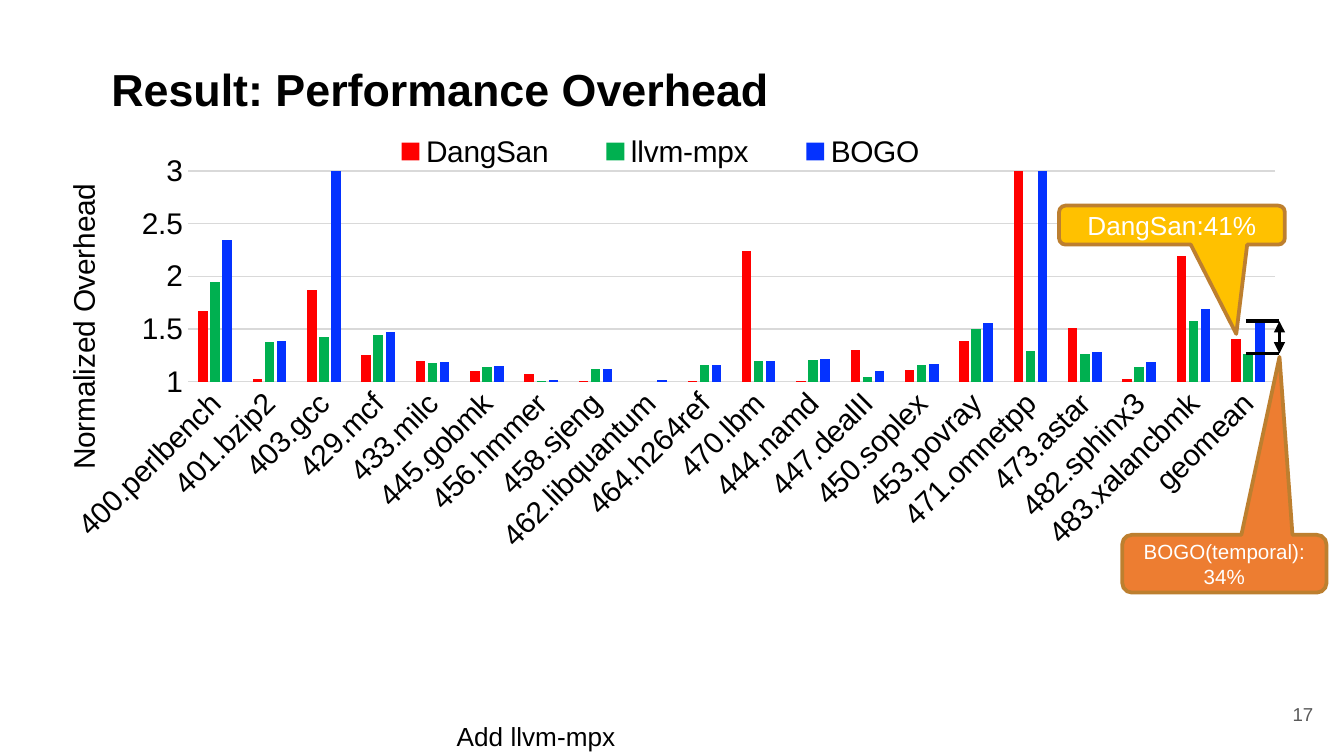
from lxml import etree
from pptx import Presentation
from pptx.chart.data import CategoryChartData
from pptx.dml.color import RGBColor
from pptx.enum.chart import XL_CHART_TYPE, XL_LEGEND_POSITION, XL_TICK_MARK
from pptx.enum.shapes import MSO_CONNECTOR, MSO_SHAPE
from pptx.enum.text import MSO_ANCHOR, PP_ALIGN
from pptx.oxml import parse_xml
from pptx.oxml.ns import nsdecls, qn
from pptx.util import Inches, Pt

FONT = "Arial"
BLACK = RGBColor(0x00, 0x00, 0x00)
WHITE = RGBColor(0xFF, 0xFF, 0xFF)
GRAY = RGBColor(0x59, 0x59, 0x59)
GRID = RGBColor(0xD9, 0xD9, 0xD9)
RED = RGBColor(0xFF, 0x00, 0x00)
GREEN = RGBColor(0x00, 0xB0, 0x50)
BLUE = RGBColor(0x04, 0x32, 0xFF)
YELLOW = RGBColor(0xFF, 0xC1, 0x00)
ORANGE = RGBColor(0xED, 0x7D, 0x31)
BROWN = RGBColor(0xBD, 0x7F, 0x2F)

BENCHMARKS = [
    "400.perlbench", "401.bzip2", "403.gcc", "429.mcf", "433.milc",
    "445.gobmk", "456.hmmer", "458.sjeng", "462.libquantum", "464.h264ref",
    "470.lbm", "444.namd", "447.dealII", "450.soplex", "453.povray",
    "471.omnetpp", "473.astar", "482.sphinx3", "483.xalancbmk", "geomean",
]
SERIES = [
    ("DangSan", RED, [1.67, 1.03, 1.87, 1.25, 1.2, 1.1, 1.07, 1.01, 0.99, 1.01,
                      2.24, 1.01, 1.3, 1.11, 1.39, 7.72, 1.51, 1.03, 2.19, 1.41]),
    ("llvm-mpx", GREEN, [1.95, 1.38, 1.43, 1.44, 1.18, 1.14, 1.01, 1.12, 1, 1.16,
                         1.2, 1.21, 1.05, 1.16, 1.5, 1.29, 1.26, 1.14, 1.58, 1.26]),
    ("BOGO", BLUE, [2.35, 1.39, 6.76, 1.47, 1.19, 1.15, 1.02, 1.12, 1.02, 1.16,
                    1.2, 1.22, 1.1, 1.17, 1.56, 16.16, 1.28, 1.19, 1.69, 1.6]),
]


def style_font(font, size, color=BLACK, bold=False):
    font.name, font.size, font.bold = FONT, Pt(size), bold
    font.color.rgb = color


def write(sp, text, size, color=BLACK, bold=False, align=PP_ALIGN.LEFT):
    p = sp.text_frame.paragraphs[0]
    p.text = text
    p.alignment = align
    style_font(p.runs[0].font, size, color, bold)


def add_label(slide, box, text, size, wrap=False, **style):
    sp = slide.shapes.add_textbox(*map(Inches, box))
    sp.text_frame.word_wrap = wrap
    write(sp, text, size, **style)
    return sp


def set_layout(parent, after, x, y, w=None, h=None, inner=False):
    """Fix a chart part at fractions of the chart area."""
    for old in parent.findall(qn("c:layout")):
        parent.remove(old)
    layout = parse_xml(f"<c:layout {nsdecls('c')}><c:manualLayout/></c:layout>")
    values = [("layoutTarget", "inner" if inner else None),
              ("xMode", "edge"), ("yMode", "edge"),
              ("x", x), ("y", y), ("w", w), ("h", h)]
    for tag, value in values:
        if value is not None:
            etree.SubElement(layout[0], qn(f"c:{tag}")).set("val", str(value))
    if after is None:
        parent.insert(0, layout)
    else:
        parent.find(qn(after)).addnext(layout)


def style_axes(chart):
    cat, val = chart.category_axis, chart.value_axis
    for axis in (cat, val):
        axis.major_tick_mark = axis.minor_tick_mark = XL_TICK_MARK.NONE
        style_font(axis.tick_labels.font, 16)
    cat.format.line.color.rgb = GRID
    cat.format.line.width = Pt(0.75)
    body = cat._element.find(qn("c:txPr")).find(qn("a:bodyPr"))
    body.set("rot", "-2700000")
    body.set("vert", "horz")

    val.minimum_scale, val.maximum_scale, val.major_unit = 1, 3, 0.5
    val.tick_labels.number_format = "General"
    val.tick_labels.number_format_is_linked = False
    val.format.line.fill.background()
    val.major_gridlines.format.line.color.rgb = GRID
    val.major_gridlines.format.line.width = Pt(0.75)
    title = val.axis_title
    title.text_frame.text = "Normalized Overhead"
    style_font(title.text_frame.paragraphs[0].runs[0].font, 16)
    body = title.text_frame._txBody.find(qn("a:bodyPr"))
    body.set("rot", "-5400000")
    body.set("vert", "horz")
    set_layout(title._element, "c:tx", 0, 0.09)


def add_overhead_chart(slide, box):
    data = CategoryChartData()
    data.categories = BENCHMARKS
    for name, _, values in SERIES:
        data.add_series(name, values)
    chart = slide.shapes.add_chart(
        XL_CHART_TYPE.COLUMN_CLUSTERED, *map(Inches, box), data).chart
    style_font(chart.font, 16)
    chart.has_title = False

    plot = chart.plots[0]
    plot.gap_width, plot.overlap, plot.vary_by_categories = 219, -27, False
    for series, (_, color, _) in zip(plot.series, SERIES):
        series.format.fill.solid()
        series.format.fill.fore_color.rgb = color
        series.invert_if_negative = False
    style_axes(chart)

    chart.has_legend = True
    legend = chart.legend
    legend.position = XL_LEGEND_POSITION.BOTTOM
    legend.include_in_layout = False
    style_font(legend.font, 16)
    set_layout(legend._element, "c:legendPos", 0.24, 0, 0.5, 0.07)
    plot_area = chart._chartSpace.chart.plotArea
    set_layout(plot_area, None, 0.105, 0.075, 0.886, 0.431, inner=True)


def add_callout(slide, box, text, size, fill, tip):
    """Add a rounded callout; tip is its offset from the centre in box sizes."""
    sp = slide.shapes.add_shape(
        MSO_SHAPE.ROUNDED_RECTANGULAR_CALLOUT, *map(Inches, box))
    sp.shadow.inherit = False
    sp.adjustments[0], sp.adjustments[1] = tip
    sp.fill.solid()
    sp.fill.fore_color.rgb = fill
    sp.line.color.rgb = BROWN
    sp.line.width = Pt(2)
    sp.text_frame.word_wrap = True
    sp.text_frame.vertical_anchor = MSO_ANCHOR.MIDDLE
    write(sp, text, size, WHITE, align=PP_ALIGN.CENTER)


def add_line(slide, x1, y1, x2, y2, arrows=False):
    line = slide.shapes.add_connector(
        MSO_CONNECTOR.STRAIGHT, *map(Inches, (x1, y1, x2, y2)))
    line.line.color.rgb = BLACK
    line.line.width = Pt(2)
    if arrows:
        for end in ("a:headEnd", "a:tailEnd"):
            etree.SubElement(line.line._get_or_add_ln(), qn(end)).set("type", "triangle")
    etree.SubElement(line._element.spPr, qn("a:effectLst"))


def add_gap_marker(slide, x, y, w, h):
    """Bracket the distance between two bar tops with a double arrow."""
    for level in (y, y + h):
        add_line(slide, x, level, x + w, level)
    add_line(slide, x + w, y, x + w, y + h, arrows=True)


def add_page_number(slide, box, number):
    sp = add_label(slide, box, number, 10, wrap=True, color=GRAY, align=PP_ALIGN.RIGHT)
    sp.text_frame.vertical_anchor = MSO_ANCHOR.MIDDLE


def main():
    prs = Presentation()
    prs.slide_width = Inches(10)
    prs.slide_height = prs.slide_width * 9 // 16
    slide = prs.slides.add_slide(prs.slide_layouts[6])
    add_overhead_chart(slide, (0.44, 1, 9.13, 3.64))
    add_label(slide, (0.73, 0.41, 5.14, 0.5), "Result: Performance Overhead", 24, bold=True)
    add_page_number(slide, (9.27, 5.1, 0.6, 0.43), "17")
    add_callout(slide, (7.88, 1.53, 1.68, 0.29), "DangSan:41%", 14, YELLOW, (0.285, 2.79))
    add_callout(slide, (8.35, 3.98, 1.52, 0.43), "BOGO(temporal): 34%", 11, ORANGE,
                (0.27, -3.58))
    add_label(slide, (3.3, 5.31, 1.39, 0.34), "Add llvm-mpx", 14)
    add_gap_marker(slide, 9.27, 2.39, 0.25, 0.24)
    prs.save("out.pptx")


if __name__ == "__main__":
    main()
